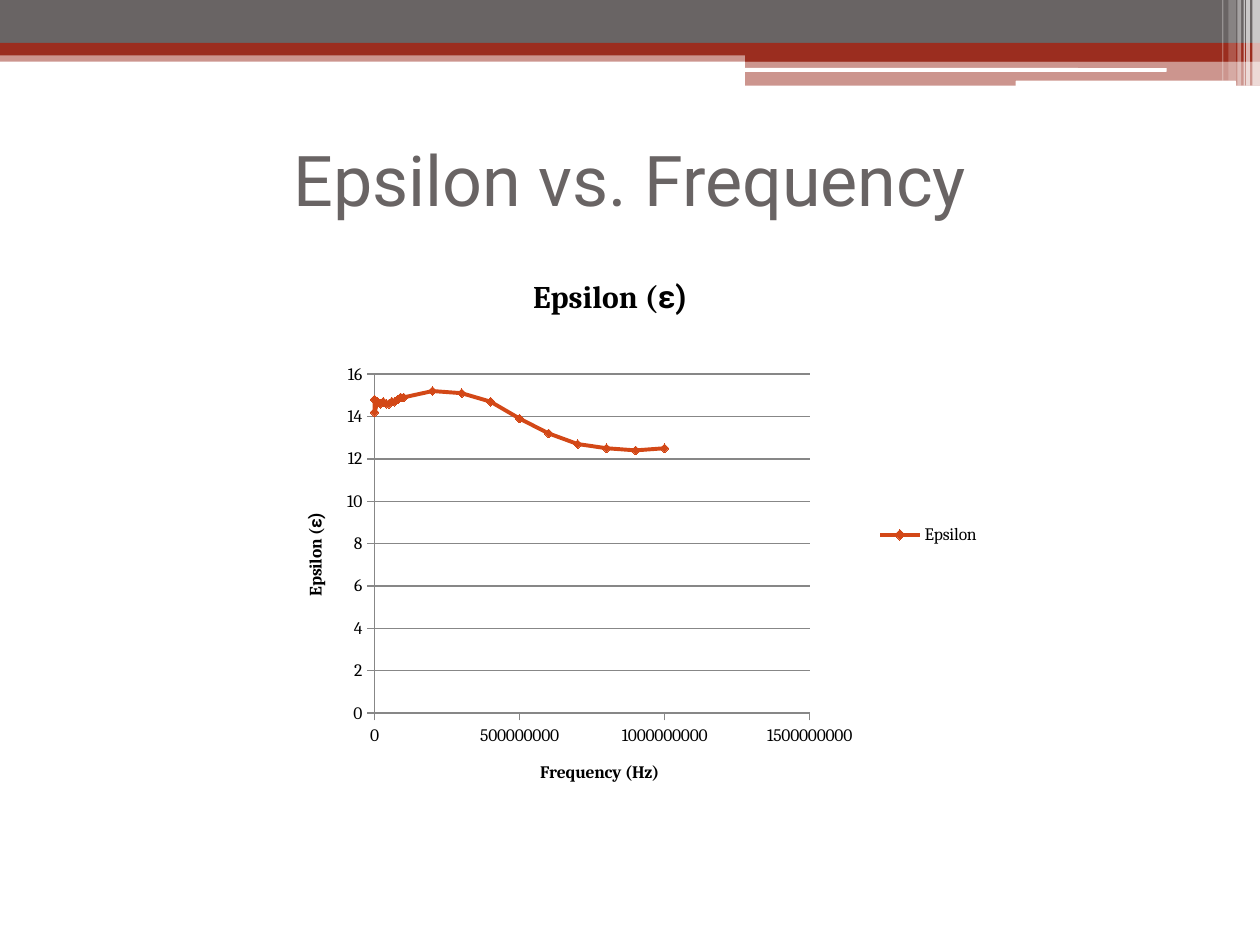
from dataclasses import dataclass

import pptx
import pptx.chart.data
import pptx.dml.color
import pptx.enum.chart
import pptx.enum.shapes
import pptx.enum.text
import pptx.oxml
import pptx.oxml.ns
import pptx.util

COLUMNS, ROWS = 100, 75  # slide grid: one cell is a tenth of an inch


@dataclass(frozen=True)
class Theme:
    slate: str = "696464"
    brick: str = "9B2D1F"
    white: str = "FFFFFF"
    black: str = "000000"
    orange: str = "D34817"
    grid: str = "878787"
    title_font: str = "Roboto"
    chart_font: str = "Cambria"
    symbol_font: str = "Roboto"
    title_size: int = 40
    chart_title_size: int = 18
    chart_size: int = 10


def rgb(color):
    return pptx.dml.color.RGBColor.from_string(color)


def add_value(parent, tag, value):
    child = pptx.oxml.parse_xml(f'<{tag} {pptx.oxml.ns.nsdecls(tag[0])} val="{value}"/>')
    parent.append(child)


def remove_all(parent, tag):
    for child in parent.findall(pptx.oxml.ns.qn(tag)):
        parent.remove(child)


def fix_layout(parent, index, percents, inner=False):
    """Pin a chart part at percentages of the chart: x, y and perhaps w, h."""
    remove_all(parent, "c:layout")
    layout = pptx.oxml.parse_xml(
        f'<c:layout {pptx.oxml.ns.nsdecls("c")}><c:manualLayout/></c:layout>')
    parent.insert(index, layout)
    if inner:
        add_value(layout[0], "c:layoutTarget", "inner")
    for mode in ("xMode", "yMode"):
        add_value(layout[0], f"c:{mode}", "edge")
    for side, percent in zip("xywh", percents):
        add_value(layout[0], f"c:{side}", percent / 100)


class SlideBuilder:
    def __init__(self, deck, theme):
        self.deck = deck
        self.theme = theme
        self.page = deck.slides.add_slide(deck.slide_layouts[6])

    def place(self, left, top, width, height):
        """Turn grid columns and rows into slide lengths."""
        across = self.deck.slide_width / COLUMNS
        down = self.deck.slide_height / ROWS
        return [round(n) for n in (left * across, top * down, width * across, height * down)]

    def bar(self, area, color, opacity=100, rounded=False):
        kinds = pptx.enum.shapes.MSO_SHAPE
        kind = kinds.ROUNDED_RECTANGLE if rounded else kinds.RECTANGLE
        shape = self.page.shapes.add_shape(kind, *self.place(*area))
        shape.shadow.inherit = False
        shape.line.fill.background()
        shape.fill.solid()
        shape.fill.fore_color.rgb = rgb(color)
        if opacity < 100:
            fill_color = shape.fill._xPr.find(".//" + pptx.oxml.ns.qn("a:srgbClr"))
            add_value(fill_color, "a:alpha", opacity * 1000)

    def title(self, area, text):
        box = self.page.shapes.add_textbox(*self.place(*area))
        frame = box.text_frame
        frame.word_wrap = True
        frame.vertical_anchor = pptx.enum.text.MSO_ANCHOR.MIDDLE
        para = frame.paragraphs[0]
        para.text = text
        para.alignment = pptx.enum.text.PP_ALIGN.CENTER
        self.style_font(para.font, self.theme.title_font, self.theme.title_size, self.theme.slate)

    def style_font(self, font, name, size, color, bold=False):
        font.name = name
        font.size = pptx.util.Pt(size)
        font.color.rgb = rgb(color)
        font.bold = bold

    def chart_caption(self, owner, spans, size):
        """Give a chart or an axis its bold title: words, then a symbol."""
        caption = owner.chart_title if hasattr(owner, "chart_title") else owner.axis_title
        para = caption.text_frame.paragraphs[0]
        for text, font_name in zip(spans, (self.theme.chart_font, self.theme.symbol_font)):
            span = para.add_run()
            span.text = text
            self.style_font(span.font, font_name, size, self.theme.black, bold=True)
        return caption

    def axis(self, axis, spans, maximum, step):
        marks = pptx.enum.chart.XL_TICK_MARK
        axis.minimum_scale, axis.maximum_scale, axis.major_unit = 0, maximum, step
        axis.major_tick_mark, axis.minor_tick_mark = marks.OUTSIDE, marks.NONE
        axis.tick_labels.number_format = "General"
        axis.tick_labels.number_format_is_linked = False
        self.thin_line(axis.format.line)
        self.chart_caption(axis, spans, self.theme.chart_size)

    def thin_line(self, line):
        line.color.rgb = rgb(self.theme.grid)
        line.width = pptx.util.Pt(0.75)

    def scatter(self, area, name, points, heading, heading_at, x_axis, y_axis, plot):
        data = pptx.chart.data.XyChartData()
        series_data = data.add_series(name)
        for x, y in points:
            series_data.add_data_point(x, y)
        kind = pptx.enum.chart.XL_CHART_TYPE.XY_SCATTER_LINES
        chart = self.page.shapes.add_chart(kind, *self.place(*area), data).chart
        theme = self.theme
        self.style_font(chart.font, theme.chart_font, theme.chart_size, theme.black)

        # Heading lies over the chart area
        caption = self.chart_caption(chart, heading, theme.chart_title_size)
        fix_layout(caption._element, 1, heading_at)
        remove_all(caption._element, "c:overlay")
        add_value(caption._element, "c:overlay", 1)

        # Axes and gridlines
        self.axis(chart.category_axis, *x_axis)
        self.axis(chart.value_axis, *y_axis)
        chart.category_axis.has_major_gridlines = False
        chart.value_axis.has_major_gridlines = True
        self.thin_line(chart.value_axis.major_gridlines.format.line)

        # Legend
        chart.has_legend = True
        chart.legend.position = pptx.enum.chart.XL_LEGEND_POSITION.RIGHT
        chart.legend.include_in_layout = False

        # Series line and markers
        chart.plots[0].vary_by_categories = False
        series = chart.plots[0].series[0]
        series.smooth = False
        series.format.line.color.rgb = rgb(theme.orange)
        series.format.line.width = pptx.util.Pt(2.25)
        series.marker.style = pptx.enum.chart.XL_MARKER_STYLE.DIAMOND
        series.marker.size = 5
        series.marker.format.fill.solid()
        series.marker.format.fill.fore_color.rgb = rgb(theme.orange)
        series.marker.format.line.color.rgb = rgb(theme.orange)

        fix_layout(chart._chartSpace.chart.plotArea, 0, plot, inner=True)


def main():
    deck = pptx.Presentation()
    deck.slide_width, deck.slide_height = pptx.util.Inches(10), pptx.util.Inches(7.5)
    theme = Theme()
    slide = SlideBuilder(deck, theme)

    # Header bands
    slide.bar((0, 4, 100, 0.9), theme.brick, 50)
    slide.bar((0, 0, 100, 3.4), theme.slate)
    slide.bar((0, 3.4, 100, 1), theme.brick)
    slide.bar((59.15, 3.9, 40.85, 1), theme.brick)
    slide.bar((59.15, 4.8, 40.85, 2), theme.brick, 50)
    slide.bar((59.1, 5.4, 33.5, 0.3), theme.white, rounded=True)
    slide.bar((80.6, 6.4, 17.5, 0.45), theme.white, rounded=True)

    # Pale stripes at the right edge: left, width, height, opacity
    stripes = [(99.4, 0.6, 6.8, 65), (98.9, 0.3, 6.8, 65), (98.7, 0.1, 6.8, 60),
               (98.2, 0.3, 6.8, 40), (97.5, 0.6, 6.4, 20), (97, 0.1, 6.4, 30)]
    for left, width, height, opacity in stripes:
        slide.bar((left, 0, width, height), theme.white, opacity)

    slide.title((5, 8.3, 90, 11.7), "Epsilon vs. Frequency")

    # Measurements: two near zero, then steps of 10 MHz and of 100 MHz
    mega = 1_000_000
    frequencies = [0, 0, *range(10 * mega, 100 * mega, 10 * mega),
                   *range(100 * mega, 1001 * mega, 100 * mega)]
    epsilons = [14.8, 14.2, 14.7, 14.6, 14.7, 14.6, 14.6, 14.7, 14.7, 14.8, 14.9,
                14.9, 15.2, 15.1, 14.7, 13.9, 13.2, 12.7, 12.5, 12.4, 12.5]
    slide.scatter((18.3, 18.3, 60.8, 48.3), "Epsilon ", zip(frequencies, epsilons),
                  heading=("Epsilon (", "ε) "), heading_at=(39, 7),
                  x_axis=(("Frequency (Hz)",), 1500 * mega, 500 * mega),
                  y_axis=(("Epsilon (", "ε)"), 16, 2),
                  plot=(18.8, 23.6, 56.8, 55.7))

    deck.save("out.pptx")


if __name__ == "__main__":
    main()
